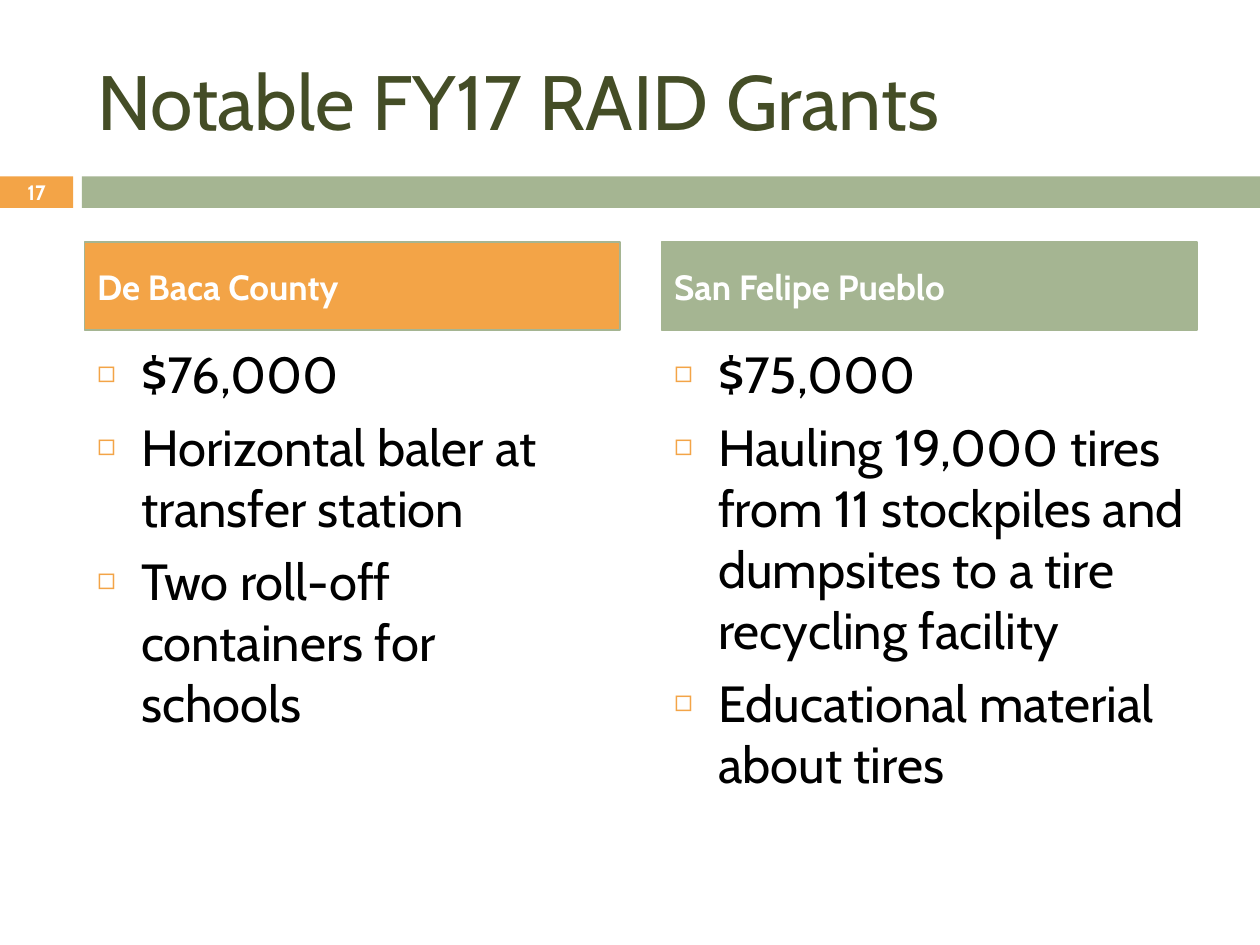
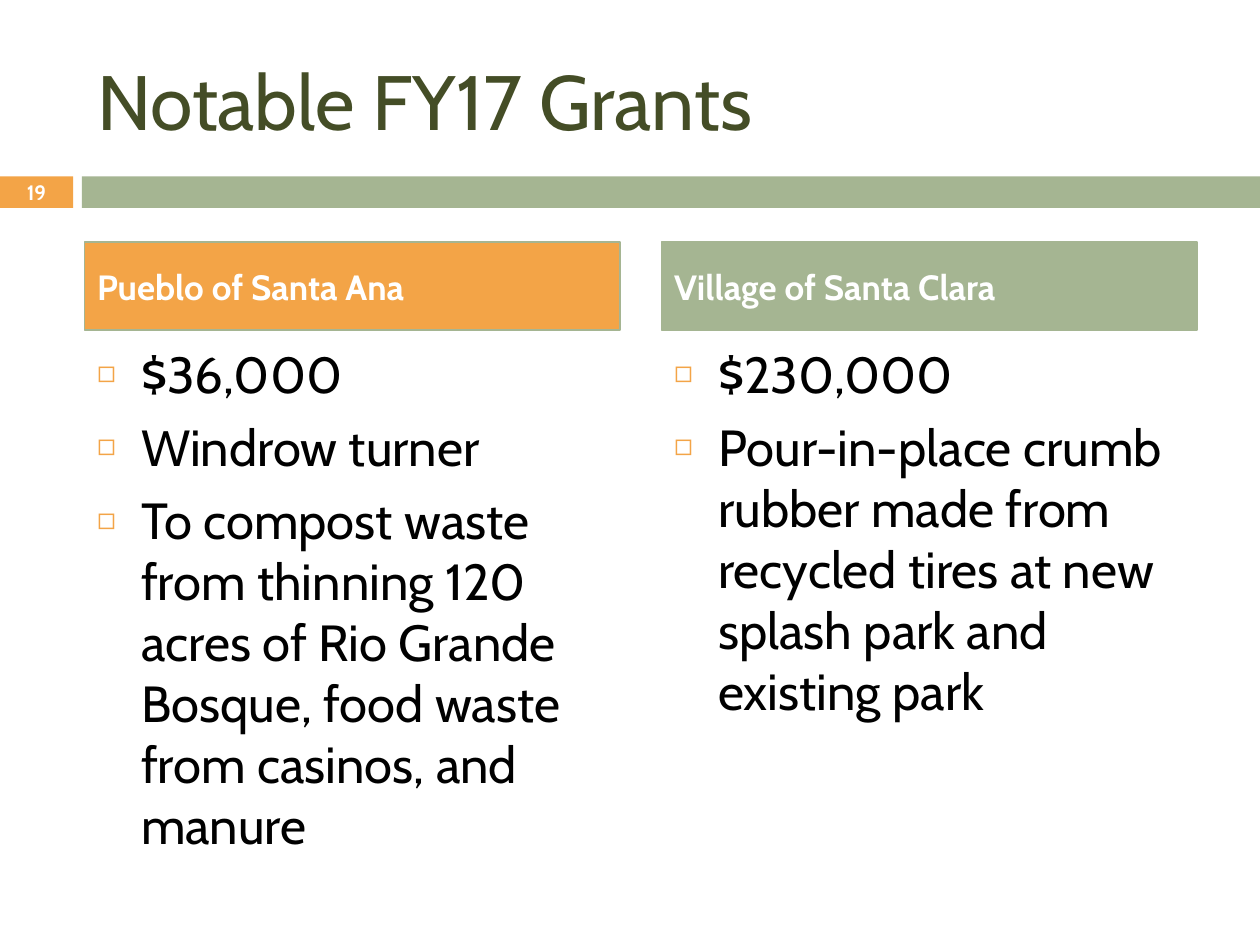
from typing import NamedTuple

from lxml import etree
from pptx import Presentation
from pptx.dml.color import RGBColor
from pptx.enum import shapes, text
from pptx.oxml.ns import qn
from pptx.util import Inches, Pt

ORANGE = RGBColor(0xF3, 0xA4, 0x47)
SAGE = RGBColor(0xA5, 0xB5, 0x92)
OLIVE = RGBColor(0x44, 0x4D, 0x26)
BLACK = RGBColor(0, 0, 0)
WHITE = RGBColor(0xFF, 0xFF, 0xFF)
FONT = "Cabin"

COMPARISON_LAYOUT = 4
LEFT = 0.67
COLUMN_STEP = 4.58
COLUMN_WIDTH = 4.25
INDENT = Inches(0.35)


class Box(NamedTuple):
    left: float
    top: float
    width: float
    height: float

    def lengths(self) -> list:
        return [Inches(side) for side in self]


class Band(NamedTuple):
    box: Box
    color: RGBColor


class Grant(NamedTuple):
    recipient: str
    details: list[str]


class GrantSlide(NamedTuple):
    title: str
    number: int
    grants: list[Grant]


TITLE_BOX = Box(LEFT, 0.25, 8.92, 1.08)
NUMBER_BOX = Box(0, 1.39, 0.58, 0.27)
BANDS = [
    Band(Box(0, 1.4, 0.58, 0.25), ORANGE),
    Band(Box(0.65, 1.4, 9.35, 0.25), SAGE),
]
HEADING_COLORS = [ORANGE, SAGE]

GRANT_SLIDES = [
    GrantSlide("Notable FY17 RAID Grants", 17, [
        Grant("De Baca County", [
            "$76,000",
            "Horizontal baler at transfer station",
            "Two roll-off containers for schools",
        ]),
        Grant("San Felipe Pueblo", [
            "$75,000",
            "Hauling 19,000 tires from 11 stockpiles and dumpsites "
            "to a tire recycling facility",
            "Educational material about tires",
        ]),
    ]),
    GrantSlide("Notable FY17 Grants", 19, [
        Grant("Pueblo of Santa Ana", [
            "$36,000",
            "Windrow turner",
            "To compost waste from thinning 120 acres of Rio Grande Bosque, "
            "food waste from casinos, and manure",
        ]),
        Grant("Village of Santa Clara", [
            "$230,000",
            "Pour-in-place crumb rubber made from recycled tires at new "
            "splash park and existing park",
        ]),
    ]),
]


def add_bullet(paragraph) -> None:
    """Give the paragraph a hanging indent and a small orange square."""
    props = paragraph._p.get_or_add_pPr()
    props.set("marL", str(INDENT))
    props.set("indent", str(-INDENT))
    color = etree.SubElement(props, qn("a:buClr"))
    etree.SubElement(color, qn("a:srgbClr"), val=str(ORANGE))
    etree.SubElement(props, qn("a:buSzPct"), val="60000")
    etree.SubElement(props, qn("a:buChar"), char="◻")


def write(shape, lines: list[str], size: float, color: RGBColor, *,
          bold: bool = False, bullets: bool = False,
          align=text.PP_ALIGN.LEFT, anchor=text.MSO_ANCHOR.MIDDLE) -> None:
    frame = shape.text_frame
    frame.text = "\n".join(lines)
    frame.word_wrap = True
    frame.auto_size = text.MSO_AUTO_SIZE.NONE
    frame.vertical_anchor = anchor
    for index, paragraph in enumerate(frame.paragraphs):
        if bullets:
            add_bullet(paragraph)
        paragraph.alignment = align
        paragraph.space_before = Pt(7 if index else 0)
        font = paragraph.font
        font.name, font.size, font.bold = FONT, Pt(size), bold
        font.color.rgb = color


def place(shape, box: Box) -> None:
    shape.left, shape.top, shape.width, shape.height = box.lengths()


def add_bands(slide, number: int) -> None:
    for band in BANDS:
        bar = slide.shapes.add_shape(shapes.MSO_SHAPE.RECTANGLE, *band.box.lengths())
        bar.shadow.inherit = False
        bar.fill.solid()
        bar.fill.fore_color.rgb = band.color
        bar.line.fill.background()
    page_number = slide.shapes.add_textbox(*NUMBER_BOX.lengths())
    write(page_number, [str(number)], 11.9, WHITE, bold=True,
          align=text.PP_ALIGN.CENTER)


def fill_column(slide, column: int, grant: Grant) -> None:
    left = LEFT + column * COLUMN_STEP
    heading = slide.placeholders[1 + 2 * column]
    place(heading, Box(left, 1.92, COLUMN_WIDTH, 0.7))
    heading.fill.solid()
    heading.fill.fore_color.rgb = HEADING_COLORS[column]
    heading.line.color.rgb = SAGE
    heading.line.width = Pt(0.75)
    write(heading, [grant.recipient], 20, WHITE, bold=True)

    details = slide.placeholders[2 + 2 * column]
    place(details, Box(left, 2.67, COLUMN_WIDTH, 3.92))
    write(details, grant.details, 29, BLACK, bullets=True,
          anchor=text.MSO_ANCHOR.TOP)


def add_grant_slide(deck, content: GrantSlide) -> None:
    slide = deck.slides.add_slide(deck.slide_layouts[COMPARISON_LAYOUT])
    add_bands(slide, content.number)
    place(slide.shapes.title, TITLE_BOX)
    write(slide.shapes.title, [content.title], 44, OLIVE)
    for column, grant in enumerate(content.grants):
        fill_column(slide, column, grant)


def main() -> None:
    deck = Presentation()
    deck.slide_width, deck.slide_height = Inches(10), Inches(7.5)
    for content in GRANT_SLIDES:
        add_grant_slide(deck, content)
    deck.save("out.pptx")


if __name__ == "__main__":
    main()
